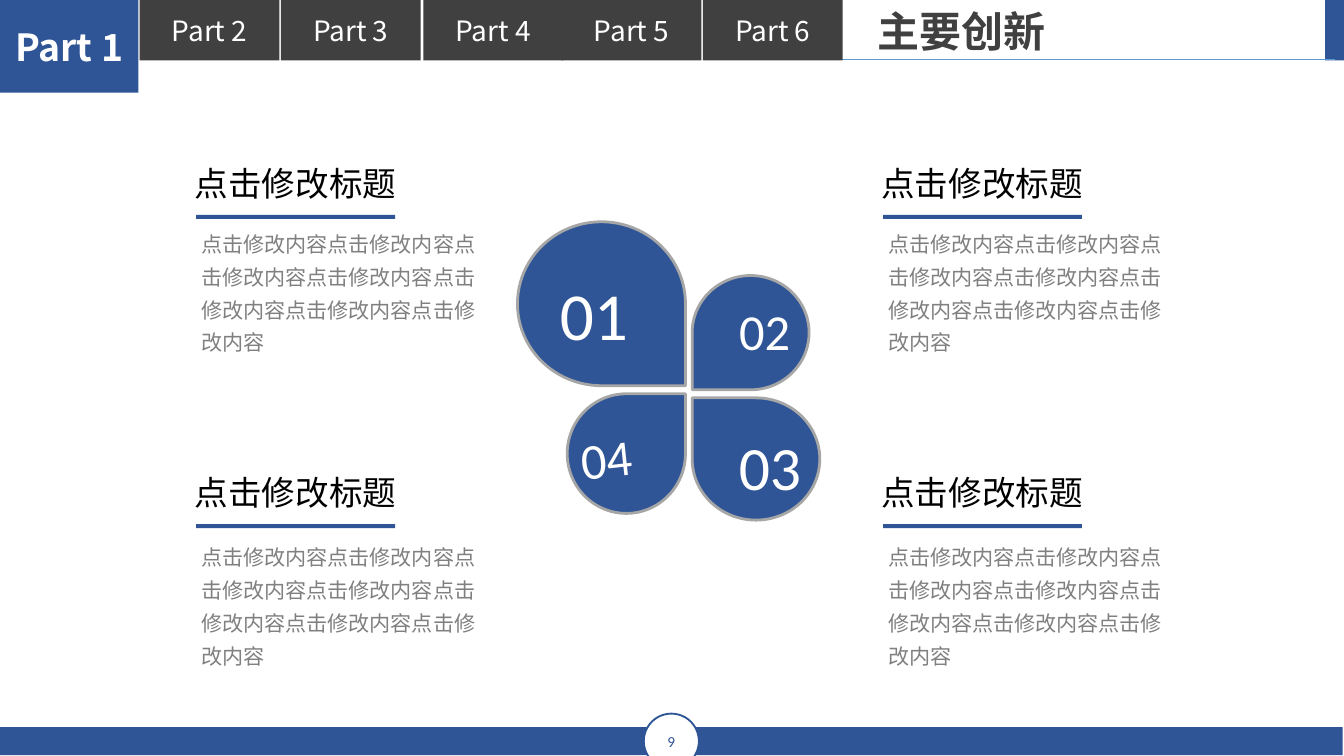
from pptx import Presentation, util as u
from pptx.dml import color
from pptx.enum import shapes, text
from pptx.oxml import ns
from lxml import etree

THEME = {
    "blue": "2F5596", "dark": "404040", "white": "FFFFFF", "black": "000000",
    "grey": "808080", "edge": "A6A6A6", "rule": "5B9BD5",
    "main": "Calibri", "heading": "Arial", "nav": "Noto Sans CJK SC",
    "active": 20, "tab": 15, "title": 22.5, "caption": 18, "body": 11.25, "number": 8.25,
}
TITLE = "主要创新"
TABS = [("Part 2", 1.04), ("Part 3", 2.09), ("Part 4", 3.15), ("Part 5", 4.18), ("Part 6", 5.23)]
CAPTION = "点击修改标题"
BODY = "点击修改内容" * 7
COLUMNS = (1.35, 6.46)
ROWS = ((1.16, 1.62), (3.46, 3.95))
PETALS = [
    {"area": (3.85, 1.65, 1.25, 1.22), "turn": 90, "label": "01", "at": (4.1, 2.06), "size": 36, "tilt": 0},
    {"area": (4.22, 2.93, 0.88, 0.89), "turn": 0, "label": "04", "at": (4.19, 3.13), "size": 27, "tilt": -6.2},
    {"area": (5.15, 2.96, 0.95, 0.91), "turn": 270, "label": "03", "at": (5.41, 3.19), "size": 33, "tilt": 0},
    {"area": (5.15, 2.05, 0.87, 0.85), "turn": 180, "label": "02", "at": (5.37, 2.18), "size": 27, "tilt": 0},
]


def rgb(name):
    """Return a theme colour."""
    return color.RGBColor.from_string(THEME[name])


def write(box, words, size, tint, font="main", bold=False, center=True, spacing=None,
          insets=(0, 0), wrap=True, grow=False):
    """Put one formatted paragraph into a box."""
    frame = box.text_frame
    across, down = map(u.Inches, insets)
    frame_format = {
        "margin_left": across, "margin_right": across, "margin_top": down, "margin_bottom": down,
        "word_wrap": wrap,
        "vertical_anchor": text.MSO_ANCHOR.MIDDLE if center else text.MSO_ANCHOR.TOP,
        "auto_size": text.MSO_AUTO_SIZE.SHAPE_TO_FIT_TEXT if grow else text.MSO_AUTO_SIZE.NONE,
    }
    for name, value in frame_format.items():
        setattr(frame, name, value)
    para = frame.paragraphs[0]
    para.alignment = text.PP_ALIGN.CENTER if center else text.PP_ALIGN.LEFT
    if spacing:
        para.line_spacing = spacing
    span = para.add_run()
    span.text = words
    for name, value in {"name": THEME[font], "size": u.Pt(size), "bold": bold}.items():
        setattr(span.font, name, value)
    span.font.color.rgb = rgb(tint)


def add_shape(page, kind, area, fill, edge=None, width=1):
    """Add a flat preset shape."""
    shape = page.shapes.add_shape(kind, *map(u.Inches, area))
    shape.shadow.inherit = False
    shape.fill.solid()
    shape.fill.fore_color.rgb = rgb(fill)
    if edge:
        shape.line.color.rgb = rgb(edge)
        shape.line.width = u.Pt(width)
    else:
        shape.line.fill.background()
    return shape


def add_text(page, area, words, size, tint, **options):
    """Add a text box."""
    box = page.shapes.add_textbox(*map(u.Inches, area))
    write(box, words, size, tint, **options)
    return box


def add_rule(page):
    """Draw the thin line under the title."""
    ends = map(u.Inches, (9.93, 0.44, 5.83, 0.44))
    rule = page.shapes.add_connector(shapes.MSO_CONNECTOR.STRAIGHT, *ends)
    rule.line.color.rgb = rgb("rule")
    rule.line.width = u.Pt(0.5)
    etree.SubElement(rule.element.spPr, ns.qn("a:effectLst"))


def add_frame(page):
    """Draw the navigation, title and footer."""
    bar = shapes.MSO_SHAPE.RECTANGLE
    active = add_shape(page, bar, (0, 0, 1.03, 0.69), "blue")
    write(active, "Part 1", THEME["active"], "white", font="nav", bold=True)
    add_shape(page, bar, (9.86, 0, 0.15, 0.45), "blue")
    add_shape(page, bar, (0, 5.41, 9.99, 0.21), "blue")
    badge = add_shape(page, shapes.MSO_SHAPE.OVAL, (4.79, 5.31, 0.41, 0.41), "white", "blue")
    write(badge, "9", THEME["number"], "blue")
    add_rule(page)
    for words, left in TABS:
        tab = add_shape(page, bar, (left, 0, 1.04, 0.45), "dark")
        write(tab, words, THEME["tab"], "white", font="nav")
    add_text(page, (6.46, 0, 1.42, 0.45), TITLE, THEME["title"], "dark", font="heading",
             bold=True, center=False, insets=(0.07, 0.04), wrap=False, grow=True)


def add_topic(page, left, top, body_top):
    """Draw one underlined caption with its body text."""
    layout = {"center": False, "insets": (0.1, 0.05), "grow": True}
    add_text(page, (left, top, 2.37, 0.4), CAPTION, THEME["caption"], "black", **layout)
    add_shape(page, shapes.MSO_SHAPE.RECTANGLE, (left + 0.11, top + 0.44, 1.48, 0.03), "blue")
    add_text(page, (left + 0.05, body_top, 2.27, 1.09), BODY, THEME["body"], "grey",
             spacing=1.3, **layout)


def add_petal(page, area, turn, label, at, size, tilt):
    """Draw one numbered petal pointing at the centre."""
    left, top, width, height = area
    if turn % 180:
        shift = (width - height) / 2
        area = (left + shift, top - shift, height, width)
    petal = add_shape(page, shapes.MSO_SHAPE.TEAR, area, "blue", "edge", 1.5)
    petal.rotation = turn
    box = add_text(page, (*at, 0.64, 0.55), label, size, "white", insets=(0.06, 0.03))
    box.rotation = tilt


def main():
    """Build and save the slide."""
    deck = Presentation()
    deck.slide_width = u.Inches(10)
    deck.slide_height = deck.slide_width * 9 // 16
    page = deck.slides.add_slide(deck.slide_layouts[6])
    add_frame(page)
    for left in COLUMNS:
        for top, body_top in ROWS:
            add_topic(page, left, top, body_top)
    for petal in PETALS:
        add_petal(page, **petal)
    deck.save("out.pptx")


if __name__ == "__main__":
    main()
